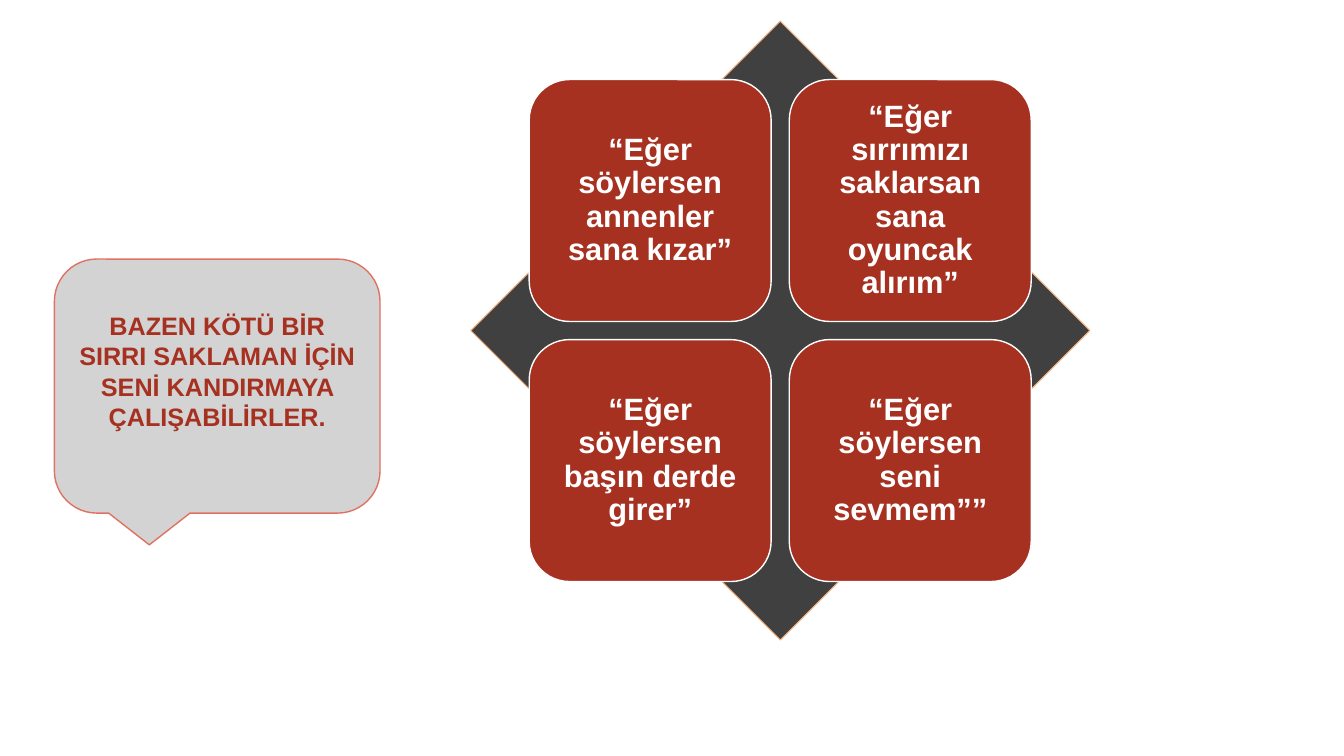
from dataclasses import dataclass

import pptx
import pptx.dml.color
import pptx.enum.shapes
import pptx.enum.text
import pptx.util

SHAPE = pptx.enum.shapes.MSO_SHAPE
Inches = pptx.util.Inches
Pt = pptx.util.Pt


@dataclass(frozen=True)
class Theme:
    font: str = "Arial"
    paper: str = "FFFFFF"
    red: str = "A63121"
    coral: str = "E07263"
    peach: str = "F7B583"
    dark: str = "404040"
    grey: str = "D3D3D3"
    tile_size: float = 22
    callout_size: float = 18


@dataclass(frozen=True)
class Box:
    """Place and size in percent of the slide's width and height."""
    left: float
    top: float
    width: float
    height: float


@dataclass(frozen=True)
class Label:
    text: str
    size: float
    color: str
    spacing: float
    margins: tuple[float, float, float, float]  # left, top, right, bottom


@dataclass(frozen=True)
class Panel:
    kind: SHAPE
    box: Box
    fill: str
    line: str
    line_width: float
    label: Label | None = None


THEME = Theme()

# Two by two grid of tiles over the diamond
DIAMOND = Box(35.03, 2.8, 46.06, 81.87)
FIRST_TILE = Box(39.38, 10.53, 18, 32)
COLUMN_STEP, ROW_STEP = 19.35, 34.4
CALLOUT = Box(4.05, 34.27, 24.23, 33.6)

THREATS = [
    ["“Eğer söylersen annenler sana kızar”",
     "“Eğer sırrımızı saklarsan sana oyuncak alırım”"],
    ["“Eğer söylersen başın derde girer”",
     "“Eğer söylersen seni sevmem””"],
]
WARNING = "BAZEN KÖTÜ BİR SIRRI SAKLAMAN İÇİN SENİ KANDIRMAYA ÇALIŞABİLİRLER."


def rgb(color: str) -> pptx.dml.color.RGBColor:
    return pptx.dml.color.RGBColor.from_string(color)


def apply(target: object, formats: dict[str, object]) -> None:
    for name, value in formats.items():
        setattr(target, name, value)


def write_label(tf: pptx.text.text.TextFrame, label: Label) -> None:
    left, top, right, bottom = (Inches(m) for m in label.margins)
    apply(tf, {
        "word_wrap": True,
        "vertical_anchor": pptx.enum.text.MSO_ANCHOR.MIDDLE,
        "margin_left": left, "margin_top": top,
        "margin_right": right, "margin_bottom": bottom,
    })
    p = tf.paragraphs[0]
    apply(p, {"alignment": pptx.enum.text.PP_ALIGN.CENTER,
              "line_spacing": label.spacing})
    r = p.add_run()
    r.text = label.text
    apply(r.font, {"name": THEME.font, "size": Pt(label.size), "bold": True})
    r.font.color.rgb = rgb(label.color)


def draw_panel(prs: pptx.presentation.Presentation,
               s: pptx.slide.Slide, panel: Panel) -> None:
    w, h = prs.slide_width / 100, prs.slide_height / 100
    box = panel.box
    sp = s.shapes.add_shape(panel.kind, round(box.left * w), round(box.top * h),
                            round(box.width * w), round(box.height * h))
    sp.shadow.inherit = False
    sp.fill.solid()
    sp.fill.fore_color.rgb = rgb(panel.fill)
    sp.line.color.rgb = rgb(panel.line)
    sp.line.width = Pt(panel.line_width)
    if panel.label:
        write_label(sp.text_frame, panel.label)


def tile(row: int, column: int, text: str) -> Panel:
    box = Box(FIRST_TILE.left + column * COLUMN_STEP,
              FIRST_TILE.top + row * ROW_STEP,
              FIRST_TILE.width, FIRST_TILE.height)
    label = Label(text, THEME.tile_size, THEME.paper, 0.9, (0.09,) * 4)
    return Panel(SHAPE.ROUNDED_RECTANGLE, box, THEME.red, THEME.paper, 1, label)


def main() -> None:
    prs = pptx.Presentation()
    prs.slide_width, prs.slide_height = Inches(13.33), Inches(7.5)
    s = prs.slides.add_slide(prs.slide_layouts[6])

    # Diamond behind the tiles
    draw_panel(prs, s, Panel(SHAPE.DIAMOND, DIAMOND, THEME.dark, THEME.peach, 0.75))

    # Four threats
    for row, texts in enumerate(THREATS):
        for column, text in enumerate(texts):
            draw_panel(prs, s, tile(row, column, text))

    # Speech bubble; the deep bottom margin lifts its text
    label = Label(WARNING, THEME.callout_size, THEME.red, 1, (0.1, 0.05, 0.1, 0.35))
    draw_panel(prs, s, Panel(SHAPE.ROUNDED_RECTANGULAR_CALLOUT, CALLOUT,
                             THEME.grey, THEME.coral, 1, label))

    prs.save("out.pptx")


if __name__ == "__main__":
    main()
